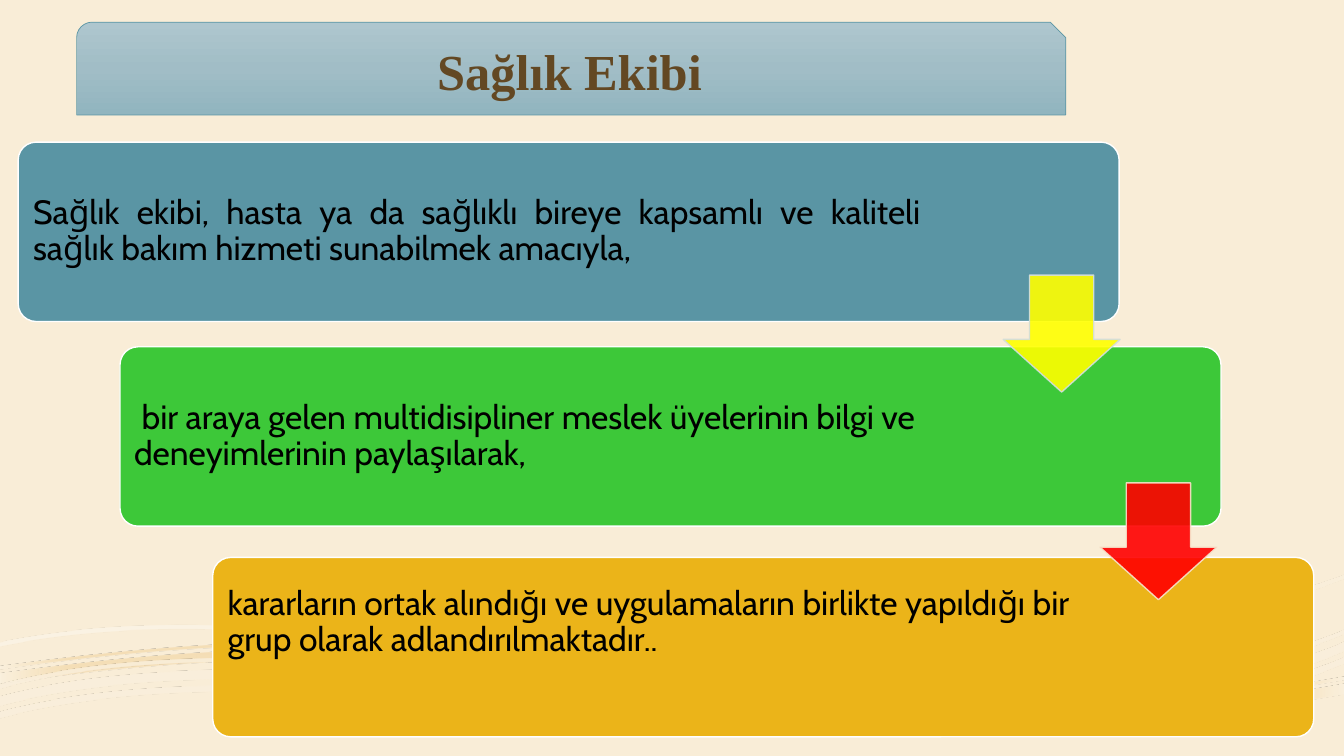
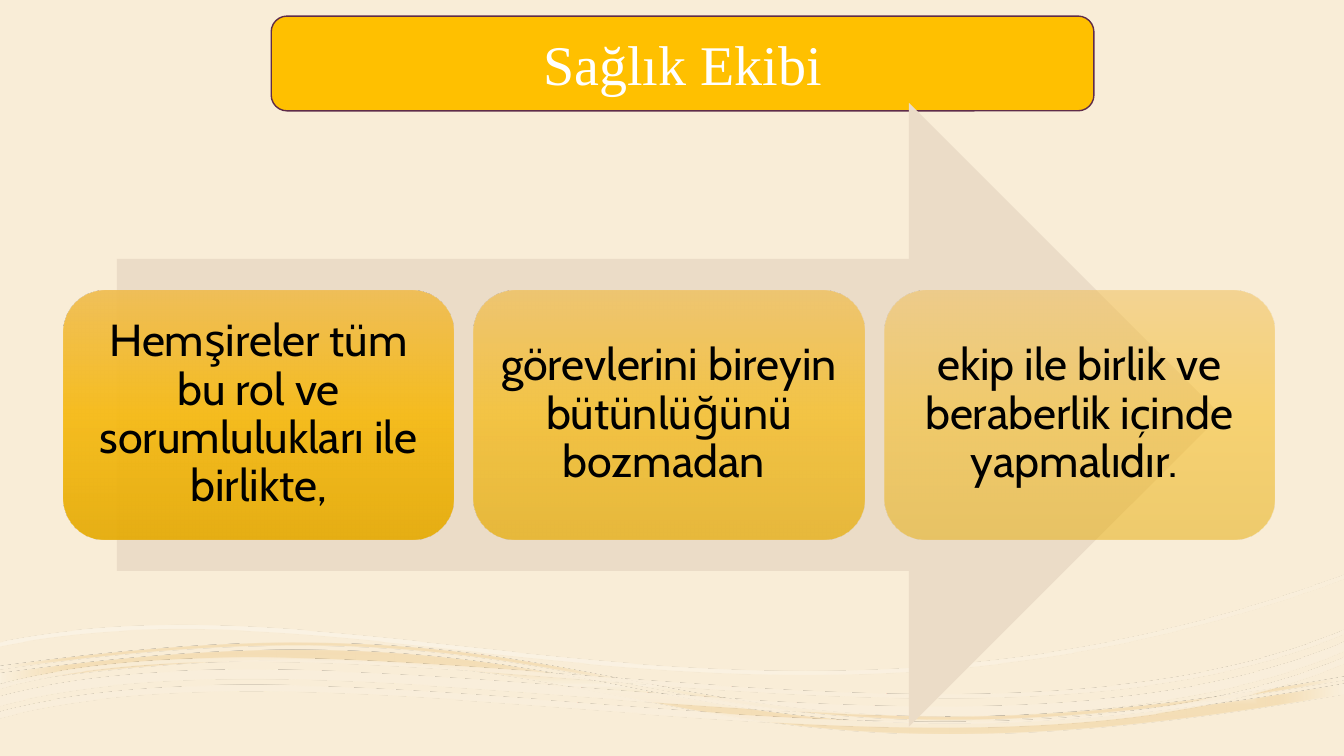
"""Build two slides about the health care team."""
import math

import lxml.etree
import pptx
import pptx.dml.color
import pptx.enum.shapes
import pptx.enum.text
import pptx.oxml.ns
import pptx.util

PX = 9144
SLIDE_SIZE = (1333, 750)
WAVE_TILT = 3.5
PRESET = pptx.enum.shapes.MSO_SHAPE
ALIGN = pptx.enum.text.PP_ALIGN

COLOURS = {
    "background": "F9EDD7",
    "white": "FFFFFF",
    "black": "000000",
    "brown": "634823",
    "teal": "5A95A4",
    "teal_light": "AEC6CE",
    "teal_middle": "A1BDC6",
    "teal_dark": "91B5BF",
    "green": "3DC839",
    "amber": "EBB419",
    "amber_light": "F0BC4E",
    "amber_middle": "F6B90E",
    "amber_dark": "E5AA02",
    "yellow": "FFFF00",
    "red": "FF0000",
    "gold": "FFC000",
    "plum": "5F2C49",
    "sand": "EBDCC7",
    "pale_blue": "D2DDE0",
    "pale_sand": "F7E5CC",
    "cream": "FAF1DF",
    "wheat": "F4DEB7",
    "wheat_dark": "F4DDB3",
    "ivory": "FAEFDC",
}

CURVES = {
    "crest": [(0, 668), (124, 651), (222, 644), (306, 645), (670, 647), (738, 782), (1333, 678)],
    "trough": [(0, 678), (667, 583), (602, 816), (1333, 688)],
    "ribbon": [(0, 637), (373, 559), (754, 784), (1333, 570)],
    "strand": [(0, 706), (349, 612), (955, 810), (1333, 652)],
}

WAVES = [
    {
        "box": (1, 612, 1331, 135),
        "bands": [("crest", 0, "trough", 0), ("crest", -7, "trough", -14)],
        "stops": [(0, "cream", 90), (18, "wheat", 100), (37, "wheat_dark", 90), (100, "cream", 100)],
        "direction": ("shape", (50, 50, 50, 50)),
    },
    {
        "box": (3, 588, 1335, 171),
        "bands": [("ribbon", 0, "ribbon", 4)],
        "stops": [(36, "white", 30), (100, "background", 48)],
        "direction": 45,
    },
    {
        "box": (-1, 625, 1336, 115),
        "bands": [
            ("strand", 0, "strand", 6),
            ("strand", -15, "strand", -6),
            ("strand", -27, "strand", -23),
        ],
        "stops": [(36, "white", 47), (100, "ivory", 82)],
        "direction": ("rect", (100, 100, 0, 0)),
    },
]

TITLE_TEXT = "Sağlık Ekibi"
TITLE_FONT = {"name": "Times New Roman"}
BODY_FONT = {"name": "Cabin"}

CARD_SIZE = (1092, 178)
CARD_PADDING = 5
CARDS = [
    {"offset": (0, 0), "colour": "teal", "width": 900, "inset": 10, "align": ALIGN.JUSTIFY,
     "text": "Sağlık ekibi, hasta ya da sağlıklı bireye kapsamlı ve kaliteli "
             "sağlık bakım hizmeti sunabilmek amacıyla,"},
    {"offset": (101, 203), "colour": "green", "width": 870, "inset": 9,
     "text": " bir araya gelen multidisipliner meslek üyelerinin bilgi ve "
             "deneyimlerinin paylaşılarak,"},
    {"offset": (193, 412), "colour": "amber", "width": 870, "inset": 10, "lift": 24,
     "text": "kararların ortak alındığı ve uygulamaların birlikte yapıldığı bir "
             "grup olarak adlandırılmaktadır.."},
]
ARROW_SIZE = (116, 116)
ARROWS = [((977, 132), "yellow", "pale_blue"), ((1073, 338), "red", "pale_sand")]

STEPS = [
    ("Hemşireler tüm bu rol ve sorumlulukları ile birlikte,", 90),
    ("görevlerini bireyin bütünlüğünü bozmadan ", 70),
    ("ekip ile birlik ve beraberlik içinde yapmalıdır. ", 50),
]


def rgb(colour):
    """Return the RGB value of a named colour."""
    return pptx.dml.color.RGBColor.from_string(COLOURS[colour])


def set_values(target, values):
    """Set each format value as an attribute of the target."""
    for name, value in values.items():
        setattr(target, name, value)


def add_element(parent, tag, **attributes):
    """Append a drawing element to its parent."""
    element = lxml.etree.SubElement(parent, pptx.oxml.ns.qn(tag))
    for name, value in attributes.items():
        element.set(name, str(value))
    return element


def paint_solid(fill_format, holder, colour, opacity=100):
    """Give a fill one colour and, if needed, transparency."""
    fill_format.solid()
    fill_format.fore_color.rgb = rgb(colour)
    if opacity < 100:
        solid = holder.find(pptx.oxml.ns.qn("a:solidFill"))
        add_element(solid[0], "a:alpha", val=opacity * 1000)


def paint_gradient(shape, stops, direction):
    """Fill a shape along an angle or around a focus rectangle."""
    shape.fill.gradient()
    gradient = shape._element.spPr.find(pptx.oxml.ns.qn("a:gradFill"))
    for child in list(gradient):
        gradient.remove(child)
    stop_list = add_element(gradient, "a:gsLst")
    for position, colour, opacity in stops:
        stop = add_element(stop_list, "a:gs", pos=position * 1000)
        value = add_element(stop, "a:srgbClr", val=COLOURS[colour])
        if opacity < 100:
            add_element(value, "a:alpha", val=opacity * 1000)
    if isinstance(direction, int):
        add_element(gradient, "a:lin", ang=direction * 60000, scaled=0)
    else:
        kind, focus = direction
        sides = {side: share * 1000 for side, share in zip("ltrb", focus)}
        add_element(add_element(gradient, "a:path", path=kind), "a:fillToRect", **sides)


def add_block(slide, preset, box, line=None, width=1, line_opacity=100, adjustments=()):
    """Add a preset shape with its outline and no shadow."""
    shape = slide.shapes.add_shape(preset, *(length * PX for length in box))
    shape.shadow.inherit = False
    for index, value in enumerate(adjustments):
        shape.adjustments[index] = value
    if line:
        shape.line.width = pptx.util.Pt(width)
        paint_solid(shape.line.fill, shape.line._get_or_add_ln(), line, line_opacity)
    else:
        shape.line.fill.background()
    return shape


def write_text(shape, text, font, size, colour, paragraph_values):
    """Write one paragraph into a shape."""
    set_values(shape.text_frame, {"word_wrap": True,
                                  "vertical_anchor": pptx.enum.text.MSO_ANCHOR.MIDDLE})
    paragraph = shape.text_frame.paragraphs[0]
    set_values(paragraph, paragraph_values)
    run = paragraph.add_run()
    run.text = text
    set_values(run.font, {**font, "size": pptx.util.Pt(size)})
    run.font.color.rgb = rgb(colour)


def add_body(slide, box, text, size, align, inset, lift=0):
    """Add a body text box with even insets, raised by the lift."""
    body = slide.shapes.add_textbox(*(length * PX for length in box))
    margins = {"margin_" + side: inset * PX for side in ("left", "top", "right")}
    set_values(body.text_frame, {**margins, "margin_bottom": (inset + 2 * lift) * PX})
    write_text(body, text, BODY_FONT, size, "black",
               {"alignment": align, "line_spacing": 0.9})


def level_points(points, shift, box):
    """Move points down by the shift and turn them into the frame of a tilted box."""
    left, top, width, height = box
    sine, cosine = math.sin(math.radians(WAVE_TILT)), math.cos(math.radians(WAVE_TILT))
    levelled = []
    for x, y in points:
        across, down = x - left - width / 2, y + shift - top - height / 2
        levelled.append((round((across * cosine - down * sine + width / 2) * PX),
                         round((across * sine + down * cosine + height / 2) * PX)))
    return levelled


def draw_segment(outline, tag, points):
    """Append one drawing command with its points."""
    segment = add_element(outline, tag)
    for x, y in points:
        add_element(segment, "a:pt", x=x, y=y)


def draw_curves(outline, points):
    """Append the cubic curves that follow the first point."""
    for first in range(1, len(points), 3):
        draw_segment(outline, "a:cubicBezTo", points[first:first + 3])


def add_wave(slide, box, bands, stops, direction):
    """Add one tilted freeform made of bands between two curves."""
    left, top, width, height = (length * PX for length in box)
    builder = slide.shapes.build_freeform(left, top)
    builder.add_line_segments([(left + width, top + height)])
    shape = builder.convert_to_shape()
    outline = next(shape._element.spPr.iter(pptx.oxml.ns.qn("a:path")))
    for command in list(outline):
        outline.remove(command)
    for upper, upper_shift, lower, lower_shift in bands:
        upper_points = level_points(CURVES[upper], upper_shift, box)
        lower_points = level_points(CURVES[lower], lower_shift, box)[::-1]
        draw_segment(outline, "a:moveTo", upper_points[:1])
        draw_curves(outline, upper_points)
        draw_segment(outline, "a:lnTo", lower_points[:1])
        draw_curves(outline, lower_points)
        add_element(outline, "a:close")
    shape.rotation = 360 - WAVE_TILT
    shape.shadow.inherit = False
    shape.line.fill.background()
    paint_gradient(shape, stops, direction)


def add_base_slide(presentation):
    """Add a blank slide with the shared waves."""
    slide = presentation.slides.add_slide(presentation.slide_layouts[6])
    for wave in WAVES:
        add_wave(slide, **wave)
    return slide


def add_title(slide, preset, box, line, width, size, colour, bold):
    """Add the title banner and return it for filling."""
    banner = add_block(slide, preset, box, line, width)
    write_text(banner, TITLE_TEXT, {**TITLE_FONT, "bold": bold}, size, colour,
               {"alignment": ALIGN.CENTER})
    return banner


def add_cascade(slide, left, top):
    """Add the stepped cards and the arrows between them."""
    for card in CARDS:
        x, y = left + card["offset"][0], top + card["offset"][1]
        shape = add_block(slide, PRESET.ROUNDED_RECTANGLE, (x, y, *CARD_SIZE),
                          "white", adjustments=[0.1])
        paint_solid(shape.fill, shape._element.spPr, card["colour"])
        text_box = (x + CARD_PADDING, y + CARD_PADDING,
                    card["width"], CARD_SIZE[1] - 2 * CARD_PADDING)
        add_body(slide, text_box, card["text"], 24, card.get("align", ALIGN.LEFT),
                 card["inset"], card.get("lift", 0))
    for (x, y), colour, line in ARROWS:
        arrow = add_block(slide, PRESET.DOWN_ARROW, (left + x, top + y, *ARROW_SIZE),
                          line, line_opacity=90, adjustments=[0.55, 0.45])
        paint_solid(arrow.fill, arrow._element.spPr, colour, 90)


def add_process(slide, left, top, width, height):
    """Add a wide arrow with equally spaced steps across it."""
    inset, step_width, step_height, padding = 53, 387, 247, 12
    arrow = add_block(slide, PRESET.RIGHT_ARROW, (left + inset, top, width - 2 * inset, height))
    paint_solid(arrow.fill, arrow._element.spPr, "sand")
    pitch = (width - step_width) // (len(STEPS) - 1)
    step_top = top + (height - step_height) // 2
    for index, (text, opacity) in enumerate(STEPS):
        x = left + index * pitch
        step = add_block(slide, PRESET.ROUNDED_RECTANGLE, (x, step_top, step_width, step_height))
        paint_gradient(step, [(0, "amber_light", opacity), (50, "amber_middle", opacity),
                              (100, "amber_dark", opacity)], 90)
        text_box = (x + padding, step_top + padding,
                    step_width - 2 * padding, step_height - 2 * padding)
        add_body(slide, text_box, text, 32, ALIGN.CENTER, 13)


def build_team_slide(presentation):
    """Build the slide that defines the team."""
    slide = add_base_slide(presentation)
    banner = add_title(slide, PRESET.SNIP_ROUND_RECTANGLE, (76, 22, 981, 92),
                       "teal", 0.5, 36, "brown", True)
    paint_gradient(banner, [(0, "teal_light", 100), (50, "teal_middle", 100),
                            (100, "teal_dark", 100)], 90)
    add_cascade(slide, 18, 141)


def build_duty_slide(presentation):
    """Build the slide on the duties of nurses."""
    slide = add_base_slide(presentation)
    banner = add_title(slide, PRESET.ROUNDED_RECTANGLE, (269, 16, 816, 94),
                       "plum", 1, 40, "white", False)
    paint_solid(banner.fill, banner._element.spPr, "gold")
    add_process(slide, 63, 102, 1201, 619)


def main():
    """Build and save the presentation."""
    presentation = pptx.Presentation()
    width, height = SLIDE_SIZE
    set_values(presentation, {"slide_width": width * PX, "slide_height": height * PX})
    background = presentation.slide_master.background.fill
    background.solid()
    background.fore_color.rgb = rgb("background")
    build_team_slide(presentation)
    build_duty_slide(presentation)
    presentation.save("out.pptx")


if __name__ == "__main__":
    main()
